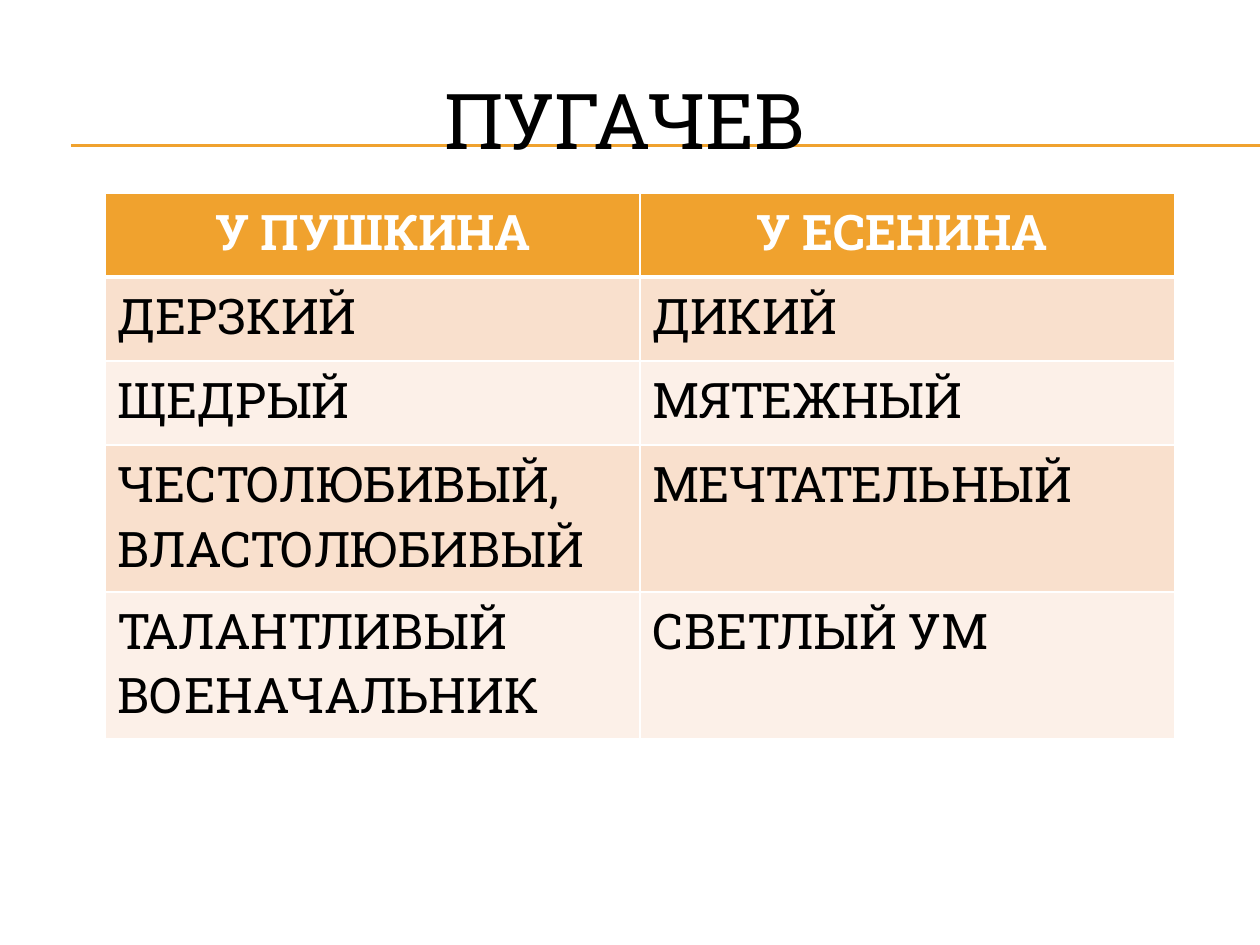
from typing import NamedTuple

from lxml.etree import SubElement
from pptx import Presentation
from pptx.dml.color import RGBColor
from pptx.enum.shapes import MSO_CONNECTOR
from pptx.enum.text import MSO_ANCHOR, MSO_AUTO_SIZE, PP_ALIGN
from pptx.oxml.ns import qn
from pptx.util import Emu, Pt

EMU_PER_PX = 914400 / 126
FONT = "Roboto Slab"
COLORS = {
    "accent": "F0A22E",
    "band_dark": "F9E0CD",
    "band_light": "FCF0E8",
    "white": "FFFFFF",
    "black": "000000",
}


class Row(NamedTuple):
    pushkin: str
    yesenin: str
    height: int


ROWS = [
    Row("У ПУШКИНА", "У ЕСЕНИНА ", 84),
    Row("ДЕРЗКИЙ", "ДИКИЙ", 84),
    Row("ЩЕДРЫЙ", "МЯТЕЖНЫЙ", 84),
    Row("ЧЕСТОЛЮБИВЫЙ, ВЛАСТОЛЮБИВЫЙ", "МЕЧТАТЕЛЬНЫЙ", 147),
    Row("ТАЛАНТЛИВЫЙ ВОЕНАЧАЛЬНИК", "СВЕТЛЫЙ УМ", 147),
]
COLUMN_WIDTH = 535


def px(value: int) -> Emu:
    return Emu(round(value * EMU_PER_PX))


def color(name: str) -> RGBColor:
    return RGBColor.from_string(COLORS[name])


def write_text(text_frame, text: str, *, size: int, fill: str = "black",
               bold: bool = False, align=PP_ALIGN.LEFT) -> None:
    paragraph = text_frame.paragraphs[0]
    paragraph.alignment = align
    run = paragraph.add_run()
    run.text = text
    font = run.font
    font.name, font.size, font.bold = FONT, Pt(size), bold
    font.color.rgb = color(fill)


def add_rule(slide, y: int) -> None:
    rule = slide.shapes.add_connector(
        MSO_CONNECTOR.STRAIGHT, px(71), px(y), px(1260), px(y))
    rule.line.color.rgb = color("accent")
    rule.line.width = Pt(0.75)
    SubElement(rule._element.spPr, qn("a:effectLst"))


def set_borders(cell, **widths: float) -> None:
    """Draw white borders; widths in points, keyed L, R, T, B in that order."""
    properties = cell._tc.get_or_add_tcPr()
    for index, (side, width) in enumerate(widths.items()):
        border = properties.makeelement(qn(f"a:ln{side}"), {"w": str(Pt(width))})
        fill = SubElement(border, qn("a:solidFill"))
        SubElement(fill, qn("a:srgbClr"), val=COLORS["white"])
        properties.insert(index, border)


def add_comparison_table(slide, rows: list[Row]) -> None:
    table = slide.shapes.add_table(
        len(rows), 2, px(105), px(193), px(2 * COLUMN_WIDTH),
        px(sum(row.height for row in rows))).table
    for column in table.columns:
        column.width = px(COLUMN_WIDTH)
    for index, row in enumerate(rows):
        table.rows[index].height = px(row.height)
        header = index == 0
        band = "accent" if header else "band_dark" if index % 2 else "band_light"
        for cell, text in zip(table.rows[index].cells, (row.pushkin, row.yesenin)):
            cell.fill.solid()
            cell.fill.fore_color.rgb = color(band)
            set_borders(cell, L=1, R=1, T=3 if index == 1 else 1, B=3 if header else 1)
            write_text(cell.text_frame, text, size=28, bold=header,
                       fill="white" if header else "black",
                       align=PP_ALIGN.CENTER if header else PP_ALIGN.LEFT)


def place_title(slide, text: str) -> None:
    title = slide.shapes.title
    title.left, title.top, title.width, title.height = map(px, (432, 66, 413, 106))
    frame = title.text_frame
    frame.word_wrap = False
    frame.auto_size = MSO_AUTO_SIZE.NONE
    frame.vertical_anchor = MSO_ANCHOR.TOP
    write_text(frame, text, size=44)
    slide.shapes._spTree.append(title._element)  # in front of the rules


def main() -> None:
    presentation = Presentation()
    presentation.slide_width, presentation.slide_height = px(1260), px(945)
    slide = presentation.slides.add_slide(presentation.slide_layouts[5])
    for y in (145, 146):
        add_rule(slide, y)
    add_comparison_table(slide, ROWS)
    place_title(slide, "ПУГАЧЕВ")
    presentation.save("out.pptx")


if __name__ == "__main__":
    main()
